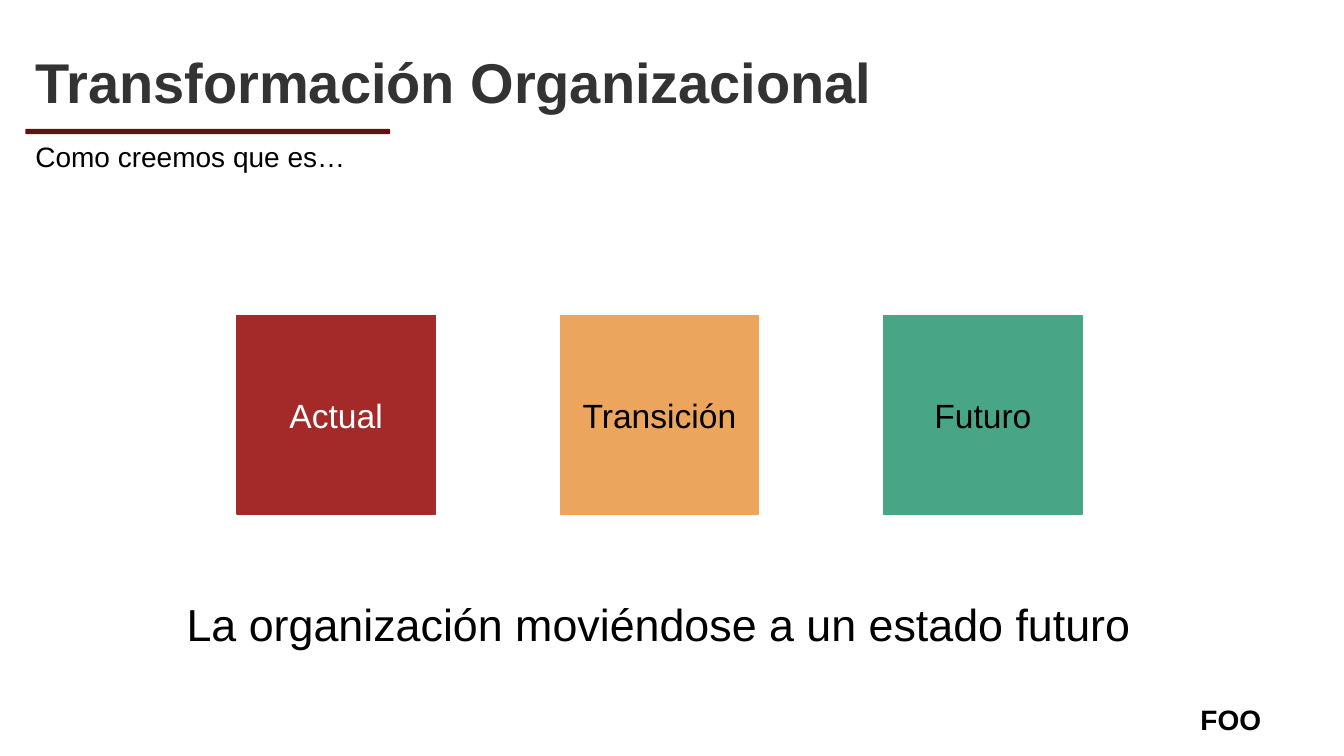
from dataclasses import dataclass

from pptx import Presentation
from pptx.dml.color import RGBColor
from pptx.enum.shapes import MSO_SHAPE
from pptx.enum.text import MSO_ANCHOR, MSO_AUTO_SIZE, PP_ALIGN
from pptx.util import Cm, Pt


@dataclass(frozen=True)
class Theme:
    font: str = "Arial"
    ink: str = "000000"
    heading: str = "333333"
    light: str = "FFFFFF"
    rule: str = "611112"
    current: str = "A42929"
    transition: str = "EBA55C"
    future: str = "48A686"
    title_size: int = 40
    caption_size: int = 32
    stage_size: int = 24
    small_size: int = 20


theme = Theme()


def write(shape, text, size, color, align, anchor, bold=False):
    frame = shape.text_frame
    frame.word_wrap = True
    frame.auto_size = MSO_AUTO_SIZE.NONE
    frame.vertical_anchor = anchor
    para = frame.paragraphs[0]
    para.alignment = align
    span = para.add_run()
    span.text = text
    span.font.name = theme.font
    span.font.size = Pt(size)
    span.font.bold = bold
    span.font.color.rgb = RGBColor.from_string(color)
    return para


def add_block(kind, left, top, width, height, color):
    block = page.shapes.add_shape(kind, Cm(left), Cm(top), Cm(width), Cm(height))
    block.shadow.inherit = False
    block.fill.solid()
    block.fill.fore_color.rgb = RGBColor.from_string(color)
    block.line.fill.background()
    return block


deck = Presentation()
deck.slide_width = Cm(33.87)
deck.slide_height = Cm(19.05)
page = deck.slides.add_slide(deck.slide_layouts[5])

title = page.shapes.title
title.left, title.top, title.width, title.height = Cm(0.64), Cm(0.64), Cm(27.66), Cm(2.39)
title_para = write(title, "Transformación Organizacional", theme.title_size, theme.heading,
                   PP_ALIGN.LEFT, MSO_ANCHOR.BOTTOM, bold=True)
title_para.line_spacing = 0.9

add_block(MSO_SHAPE.ROUNDED_RECTANGLE, 0.64, 3.25, 9.19, 0.13, theme.rule)

stage_side = 5
stage_step = 8.15
stages = [
    ("Actual", theme.current, theme.light),
    ("Transición", theme.transition, theme.ink),
    ("Futuro", theme.future, theme.ink),
]
for index, (name, fill, ink) in enumerate(stages):
    stage = add_block(MSO_SHAPE.RECTANGLE, 5.97 + index * stage_step, 7.95,
                      stage_side, stage_side, fill)
    stage.line.color.rgb = RGBColor.from_string(fill)
    stage.line.width = Pt(1)
    write(stage, name, theme.stage_size, ink, PP_ALIGN.CENTER, MSO_ANCHOR.MIDDLE)

labels = [
    ("Como creemos que es…", 0.64, 3.4, 10.34, 1.12, theme.small_size, PP_ALIGN.LEFT, False),
    ("La organización moviéndose a un estado futuro", 2.97, 14.91, 27.28, 1.63,
     theme.caption_size, PP_ALIGN.CENTER, False),
    ("FOO", 28.52, 17.58, 5, 1.12, theme.small_size, PP_ALIGN.CENTER, True),
]
for text, left, top, width, height, size, align, bold in labels:
    box = page.shapes.add_textbox(Cm(left), Cm(top), Cm(width), Cm(height))
    write(box, text, size, theme.ink, align, MSO_ANCHOR.TOP, bold)

deck.save("out.pptx")
